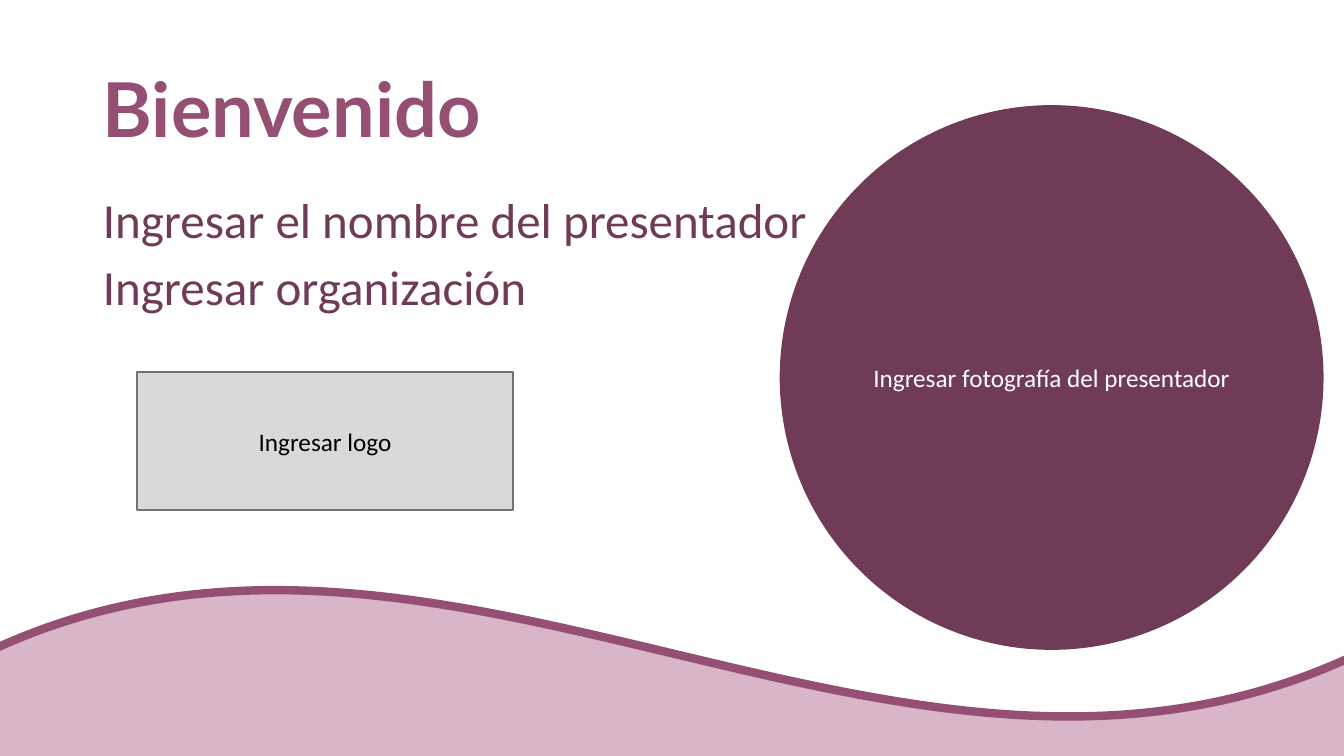
from pptx import Presentation
from pptx.dml.color import RGBColor
from pptx.enum.shapes import MSO_SHAPE
from pptx.enum.text import MSO_ANCHOR, MSO_AUTO_SIZE, PP_ALIGN
from pptx.oxml.ns import qn
from pptx.util import Inches, Pt

COLORS = {
    "plum": "703B56",
    "mauve": "954F72",
    "rose": "D8B5C7",
    "grey": "D9D9D9",
    "grey_line": "767171",
    "white": "FFFFFF",
    "black": "000000",
}

TITLE_FONT = {"name": "Lato", "size": Pt(54), "bold": True}
BODY_FONT = {"name": "Calibri", "size": Pt(35), "bold": False}
LABEL_FONT = {"name": "Calibri", "size": Pt(18), "bold": False}


def rgb(name):
    return RGBColor.from_string(COLORS[name])


def place(item, box):
    for side, length in zip(("left", "top", "width", "height"), box):
        setattr(item, side, Inches(length))


def style_text(target, font_format, color, paragraph_format):
    """Format a paragraph and the text in it."""
    for key, value in paragraph_format.items():
        setattr(target, key, value)
    for key, value in font_format.items():
        setattr(target.font, key, value)
    target.font.color.rgb = rgb(color)


def add_figure(page, kind, box, fill, line, line_width):
    figure = page.shapes.add_shape(kind, *map(Inches, box))
    figure.shadow.inherit = False
    figure.fill.solid()
    figure.fill.fore_color.rgb = rgb(fill)
    figure.line.color.rgb = rgb(line)
    figure.line.width = Pt(line_width)
    return figure


def add_wave(page, box):
    """Decorative wave, sent behind everything else."""
    wave = add_figure(page, MSO_SHAPE.WAVE, box, "rose", "mauve", 6)
    wave.element.getparent().insert(2, wave.element)


def fill_placeholder(holder, box, lines, anchor, font_format, color, space_before):
    place(holder, box)
    frame = holder.text_frame
    frame.word_wrap = True
    frame.auto_size = MSO_AUTO_SIZE.NONE
    frame.vertical_anchor = anchor
    frame.text = "\n".join(lines)
    for index, para in enumerate(frame.paragraphs):
        properties = para._p.get_or_add_pPr()
        properties.set("marL", "0")
        properties.set("indent", "0")
        properties.append(properties.makeelement(qn("a:buNone"), {}))
        style_text(para, font_format, color, {
            "alignment": PP_ALIGN.LEFT,
            "line_spacing": 0.9,
            "space_before": Pt(space_before if index else 0),
        })


def add_labelled_figure(page, kind, box, label, fill, line, text_color):
    figure = add_figure(page, kind, box, fill, line, 1)
    frame = figure.text_frame
    frame.word_wrap = True
    frame.vertical_anchor = MSO_ANCHOR.MIDDLE
    frame.text = label
    style_text(frame.paragraphs[0], LABEL_FONT, text_color,
               {"alignment": PP_ALIGN.CENTER})


def build_welcome(deck):
    page = deck.slides.add_slide(deck.slide_layouts[1])
    page.background.fill.solid()
    page.background.fill.fore_color.rgb = rgb("white")
    add_wave(page, (-0.15, 5.83, 13.63, 5.21))

    # Title and presenter details
    title, body = page.placeholders
    fill_placeholder(title, (0.92, 0.4, 11.5, 1.45), ["Bienvenido"],
                     MSO_ANCHOR.MIDDLE, TITLE_FONT, "mauve", 0)
    fill_placeholder(body, (0.92, 1.9, 11.5, 4.76),
                     ["Ingresar el nombre del presentador", "Ingresar organización"],
                     MSO_ANCHOR.TOP, BODY_FONT, "plum", 10)

    # Areas reserved for the photograph and the logo
    add_labelled_figure(page, MSO_SHAPE.OVAL, (7.74, 1.05, 5.38, 5.39),
                        "Ingresar fotografía del presentador",
                        "plum", "plum", "white")
    add_labelled_figure(page, MSO_SHAPE.RECTANGLE, (1.36, 3.69, 3.73, 1.37),
                        "Ingresar logo", "grey", "grey_line", "black")


def main():
    deck = Presentation()
    deck.slide_width = Inches(13.33)
    deck.slide_height = Inches(7.5)
    build_welcome(deck)
    deck.save("out.pptx")


if __name__ == "__main__":
    main()
